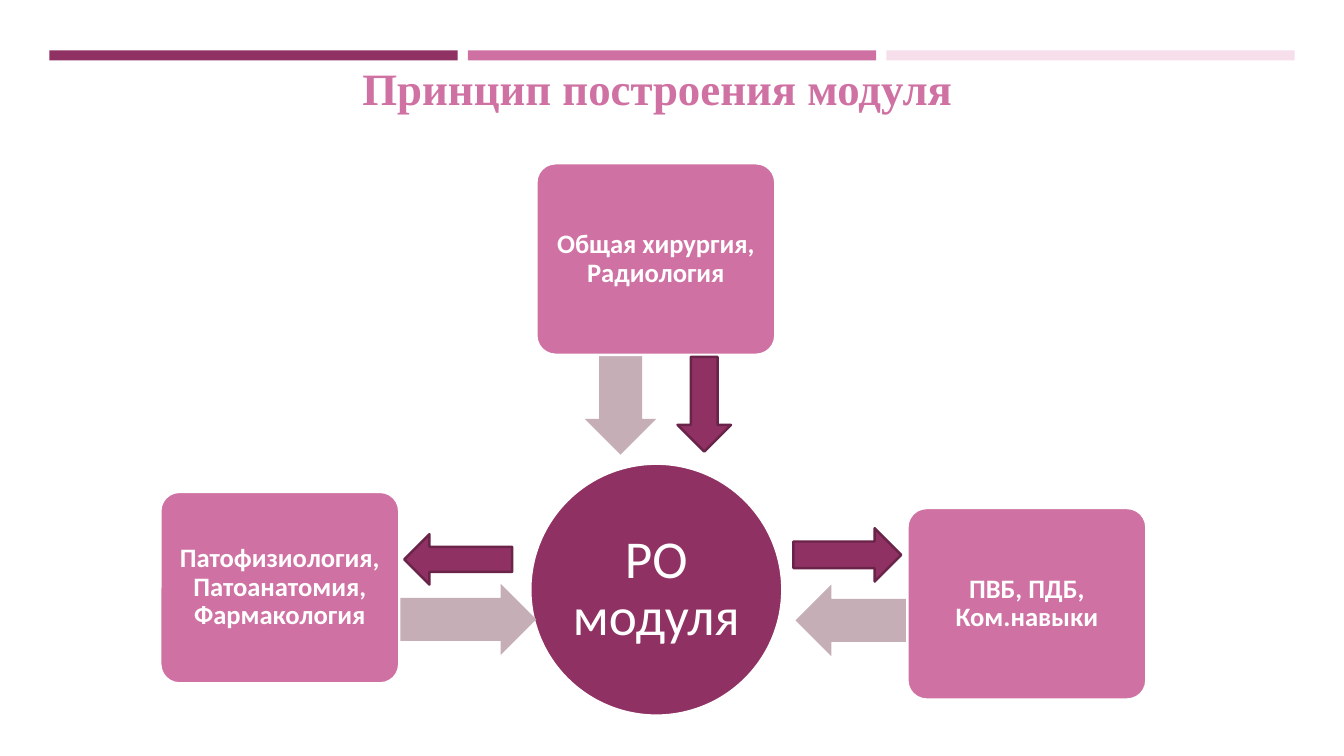
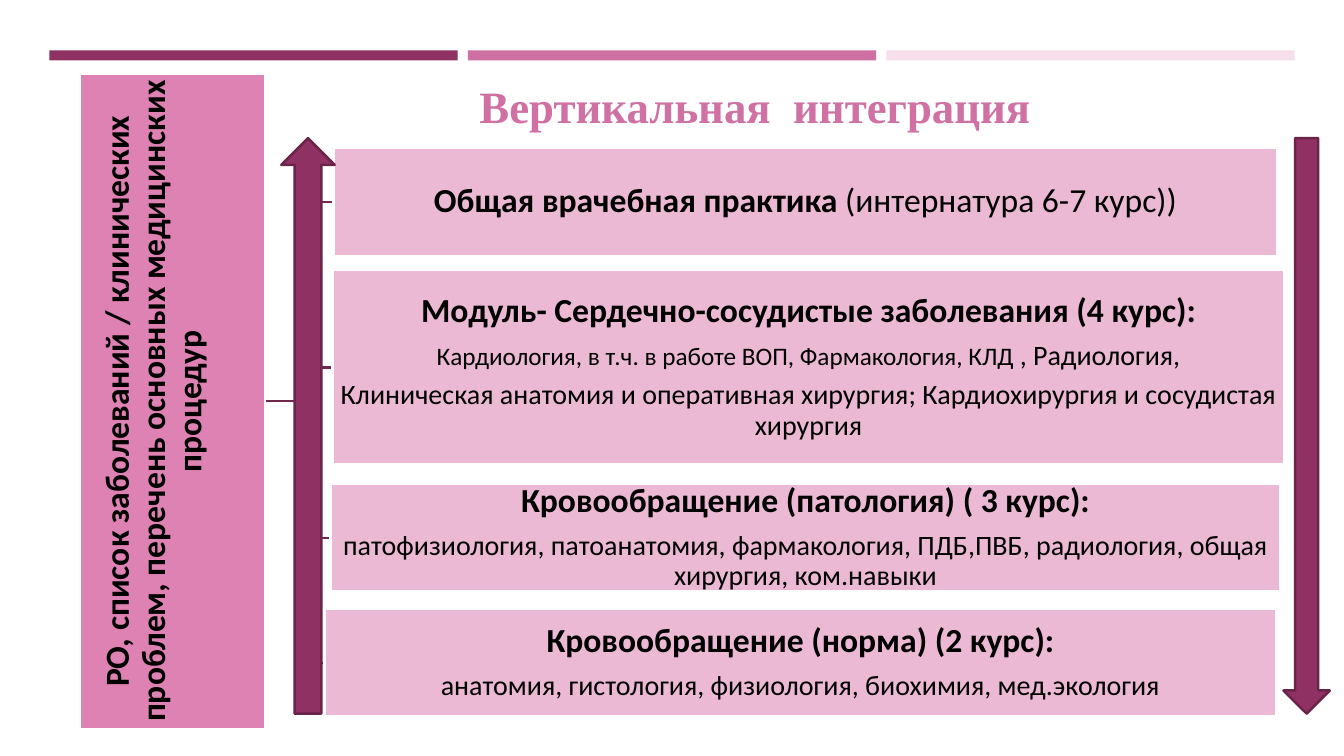
from lxml import etree
from pptx import Presentation
from pptx.dml.color import RGBColor
from pptx.enum.shapes import MSO_CONNECTOR, MSO_SHAPE as Preset
from pptx.enum.text import MSO_ANCHOR, PP_ALIGN
from pptx.oxml.ns import qn
from pptx.util import Inches, Pt

PLUM, PLUM_EDGE, CONNECTOR = "903163", "6B2449", "73274F"
ROSE, ROSE_BAND, PALE_BAND = "CF71A2", "CE71A2", "F6DEEB"
SIDEBAR, STRIP, GREY_ROSE = "DD82B3", "ECB9D5", "C6AEB7"
WHITE, BLACK = "FFFFFF", "000000"
LINE_WIDTH = 1.75
BAND_COLOURS = (PLUM, ROSE_BAND, PALE_BAND)
BAND_LEFT, BAND_TOP, BAND_WIDTH, BAND_HEIGHT, BAND_STEP = 0.49, 0.5, 4.05, 0.1, 4.15


def rgb(colour):
    return RGBColor.from_string(colour)


def add_filled(slide, preset, box, fill, line=None, adjustments=()):
    shape = slide.shapes.add_shape(preset, *map(Inches, box))
    shape.shadow.inherit = False
    shape.fill.solid()
    shape.fill.fore_color.rgb = rgb(fill)
    if line:
        shape.line.color.rgb = rgb(line)
        shape.line.width = Pt(LINE_WIDTH)
    else:
        shape.line.fill.background()
    for index, value in enumerate(adjustments):
        shape.adjustments[index] = value
    return shape


def format_run(run, size, bold, colour, font="Calibri"):
    run.font.name = font
    run.font.size = Pt(size)
    run.font.bold = bold
    run.font.color.rgb = rgb(colour)


def write(shape, paragraphs, colour, inset):
    """Fill a shape with paragraphs, each a list of (text, size, bold) runs."""
    frame = shape.text_frame
    frame.word_wrap = True
    frame.vertical_anchor = MSO_ANCHOR.MIDDLE
    frame.margin_left = frame.margin_right = Inches(inset)
    frame.margin_top = frame.margin_bottom = Inches(inset)
    for index, runs in enumerate(paragraphs):
        paragraph = frame.add_paragraph() if index else frame.paragraphs[0]
        paragraph.alignment = PP_ALIGN.CENTER
        paragraph.line_spacing = 0.9
        paragraph.space_after = Pt(round(0.35 * runs[0][1], 1))
        for text, size, bold in runs:
            run = paragraph.add_run()
            run.text = text
            format_run(run, size, bold, colour)


def add_title(slide, text, box):
    frame = slide.shapes.add_textbox(*map(Inches, box)).text_frame
    frame.word_wrap = True
    frame.text = text
    title = frame.paragraphs[0]
    title.alignment = PP_ALIGN.CENTER
    format_run(title.runs[0], 32, True, ROSE, "Times New Roman")


def add_base_slide(deck):
    """Add a blank slide with the three bands along its top."""
    slide = deck.slides.add_slide(deck.slide_layouts[6])
    for index, colour in enumerate(BAND_COLOURS):
        left = BAND_LEFT + index * BAND_STEP
        add_filled(slide, Preset.RECTANGLE, (left, BAND_TOP, BAND_WIDTH, BAND_HEIGHT), colour)
    return slide


def add_dark_arrow(slide, preset, box):
    add_filled(slide, preset, box, PLUM, PLUM_EDGE)


def add_inward_arrow(slide, preset, box):
    add_filled(slide, preset, box, GREY_ROSE, adjustments=(0.6, 0.5))


def add_subject_card(slide, left, top, subjects):
    card = add_filled(slide, Preset.ROUNDED_RECTANGLE, (left, top, 2.37, 1.9), ROSE, WHITE, (0.1,))
    write(card, [[(subjects, 19, True)]], WHITE, 0.04)


def add_elbow(slide, start, end):
    elbow = slide.shapes.add_connector(MSO_CONNECTOR.ELBOW, *map(Inches, start + end))
    elbow.line.color.rgb = rgb(CONNECTOR)
    elbow.line.width = Pt(LINE_WIDTH)
    etree.SubElement(elbow._element.spPr, qn("a:effectLst"))


def build_module_slide(deck):
    slide = add_base_slide(deck)
    hub = add_filled(slide, Preset.OVAL, (5.26, 4.6, 2.5, 2.5), PLUM, WHITE)
    write(hub, [[("РО модуля", 38, False)]], WHITE, 0.03)
    add_inward_arrow(slide, Preset.RIGHT_ARROW, (2.96, 5.79, 2.36, 0.71))
    add_inward_arrow(slide, Preset.DOWN_ARROW, (5.8, 2.59, 0.71, 1.92))
    add_inward_arrow(slide, Preset.LEFT_ARROW, (7.89, 5.8, 2.29, 0.71))
    add_subject_card(slide, 1.59, 4.88, "Патофизиология, Патоанатомия, Фармакология")
    add_subject_card(slide, 5.32, 1.62, "Общая хирургия, Радиология")
    add_subject_card(slide, 9, 5.04, "ПВБ, ПДБ, Ком.навыки")
    add_title(slide, "Принцип построения модуля", (3.46, 0.55, 6.12, 0.64))
    add_dark_arrow(slide, Preset.LEFT_ARROW, (4.01, 5.3, 1.07, 0.5))
    add_dark_arrow(slide, Preset.DOWN_ARROW, (6.72, 3.54, 0.53, 0.94))
    add_dark_arrow(slide, Preset.RIGHT_ARROW, (7.87, 5.24, 1.07, 0.53))


def add_sidebar(slide):
    sidebar = add_filled(slide, Preset.RECTANGLE, (-1.54, 3.06, 6.5, 1.84), SIDEBAR, WHITE)
    sidebar.rotation = 270
    text = "РО, список заболеваний / клинических проблем, перечень основных медицинских процедур"
    write(sidebar, [[(text, 24, True)]], BLACK, 0.02)
    sidebar.text_frame.margin_bottom = Inches(0.38)


def build_integration_slide(deck):
    slide = add_base_slide(deck)
    course_strips = [
        ((3.31, 1.47, 9.36, 1.07), [
            [("Общая врачебная практика ", 24, True), ("(интернатура 6-7 курс))", 24, False)],
        ]),
        ((3.3, 2.68, 9.44, 1.93), [
            [("Модуль- Сердечно-сосудистые заболевания (4 курс):", 24, True)],
            [("Кардиология, в т.ч. в работе ВОП, Фармакология, КЛД ", 18, False),
             (", Радиология,", 20, False)],
            [("Клиническая анатомия и оперативная хирургия; "
              "Кардиохирургия и сосудистая хирургия", 20, False)],
        ]),
        ((3.28, 4.8, 9.42, 1.07), [
            [("Кровообращение (патология) ( 3 курс):", 24, True)],
            [("патофизиология, патоанатомия, фармакология, ПДБ,ПВБ, радиология, "
              "общая хирургия, ком.навыки", 20, False)],
        ]),
        ((3.22, 6.04, 9.44, 1.07), [
            [("Кровообращение (норма) (2 курс):", 24, True)],
            [("анатомия, гистология, физиология, биохимия, мед.экология", 20, False)],
        ]),
    ]
    for (left, top, _, height), _ in course_strips:
        add_elbow(slide, (2.63, 3.98), (left, top + height / 2))
    add_sidebar(slide)
    for box, paragraphs in course_strips:
        strip = add_filled(slide, Preset.RECTANGLE, box, STRIP, WHITE)
        write(strip, paragraphs, BLACK, 0.02)
    add_title(slide, "Вертикальная  интеграция", (4.16, 0.73, 6.66, 0.64))
    add_dark_arrow(slide, Preset.UP_ARROW, (2.79, 1.37, 0.53, 5.71))
    add_dark_arrow(slide, Preset.DOWN_ARROW, (12.73, 1.37, 0.46, 5.71))


def main():
    deck = Presentation()
    deck.slide_width, deck.slide_height = Inches(13.33), Inches(7.5)
    build_module_slide(deck)
    build_integration_slide(deck)
    deck.save("out.pptx")


if __name__ == "__main__":
    main()
